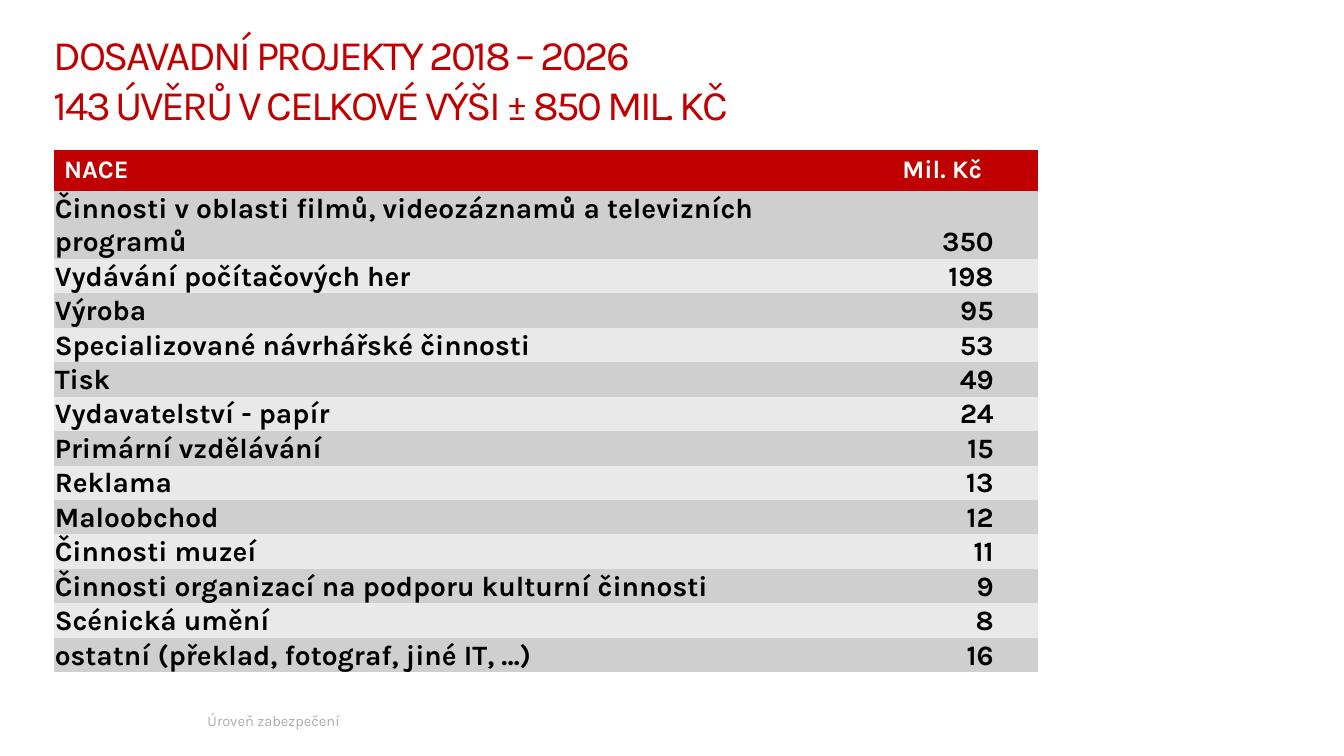
import dataclasses

import pptx
import pptx.dml.color
import pptx.enum.text
import pptx.oxml.ns
import pptx.util

Cm = pptx.util.Cm
Pt = pptx.util.Pt
Align = pptx.enum.text.PP_ALIGN
Anchor = pptx.enum.text.MSO_ANCHOR
RGB = pptx.dml.color.RGBColor.from_string


@dataclasses.dataclass(frozen=True)
class Theme:
    """Font, colours and type sizes of the slide."""
    font: str = "Karla"
    red: str = "C00000"
    white: str = "FFFFFF"
    black: str = "000000"
    muted: str = "ADADAD"
    bands: tuple = ("CFCFCF", "E9E9E9")
    title_size: float = 30
    header_size: float = 18
    body_size: float = 20
    label_size: float = 10.5


THEME = Theme()
NO_GRID_STYLE = "{2D5ABB26-0587-4C30-8999-92F81FD0307C}"
TITLE_LINES = (
    "DOSAVADNÍ PROJEKTY 2018 – 2026",
    "143 ÚVĚRŮ V CELKOVÉ VÝŠI ± 850 MIL. KČ",
)
HEADINGS = ("NACE", "Mil. Kč")
LOANS = (
    ("Činnosti v oblasti filmů, videozáznamů a televizních programů", 350),
    ("Vydávání počítačových her", 198),
    ("Výroba", 95),
    ("Specializované návrhářské činnosti", 53),
    ("Tisk", 49),
    ("Vydavatelství - papír", 24),
    ("Primární vzdělávání", 15),
    ("Reklama", 13),
    ("Maloobchod", 12),
    ("Činnosti muzeí", 11),
    ("Činnosti organizací na podporu kulturní činnosti", 9),
    ("Scénická umění", 8),
    ("ostatní (překlad, fotograf, jiné IT, …)", 16),
)


def style_paragraph(paragraph, size, color, bold=False, align=Align.LEFT):
    """Format a whole paragraph."""
    paragraph.alignment = align
    paragraph.font.name = THEME.font
    paragraph.font.size = Pt(size)
    paragraph.font.bold = bold
    paragraph.font.color.rgb = RGB(color)


def add_title(slide, left, top, width, height):
    """Fill the title placeholder with two tightly tracked lines."""
    title = slide.shapes.title
    title.left, title.top, title.width, title.height = left, top, width, height
    frame = title.text_frame
    frame.margin_left = frame.margin_right = frame.margin_top = frame.margin_bottom = 0
    frame.vertical_anchor = Anchor.BOTTOM
    frame.word_wrap = True
    frame.auto_size = pptx.enum.text.MSO_AUTO_SIZE.NONE
    frame.text = "\n".join(TITLE_LINES)
    for paragraph in frame.paragraphs:
        style_paragraph(paragraph, THEME.title_size, THEME.red)
        for run in paragraph.runs:
            run._r.get_or_add_rPr().set("spc", "-180")


def fill_cell(cell, text, fill, size, color, align):
    """Write one bold table cell on a solid fill."""
    cell.fill.solid()
    cell.fill.fore_color.rgb = RGB(fill)
    cell.text = text
    style_paragraph(cell.text_frame.paragraphs[0], size, color, True, align)


def add_loan_table(slide, left, top, width, height):
    """Add the banded table of loan volumes by activity."""
    frame = slide.shapes.add_table(len(LOANS) + 1, len(HEADINGS), left, top, width, height)
    table = frame.table
    table.horz_banding = False
    style = table._tbl.tblPr.find(pptx.oxml.ns.qn("a:tableStyleId"))
    style.text = NO_GRID_STYLE
    table.columns[1].width = Cm(4.83)
    table.columns[0].width = width - Cm(4.83)
    for row in table.rows:
        row.height = Cm(0.84)

    for column, (heading, align) in enumerate(zip(HEADINGS, (Align.LEFT, Align.CENTER))):
        fill_cell(table.cell(0, column), heading, THEME.red,
                  THEME.header_size, THEME.white, align)

    for index, (activity, amount) in enumerate(LOANS):
        entries = ((activity, Align.LEFT, Cm(0.02)), (str(amount), Align.RIGHT, Cm(1.12)))
        for column, (text, align, margin_right) in enumerate(entries):
            cell = table.cell(index + 1, column)
            cell.margin_left = cell.margin_top = Cm(0.02)
            cell.margin_right = margin_right
            cell.margin_bottom = 0
            cell.vertical_anchor = Anchor.BOTTOM
            fill_cell(cell, text, THEME.bands[index % 2],
                      THEME.body_size, THEME.black, align)


def add_security_label(slide, left, top, width, height):
    """Add the muted security label at the foot of the slide."""
    frame = slide.shapes.add_textbox(left, top, width, height).text_frame
    frame.word_wrap = True
    frame.vertical_anchor = Anchor.MIDDLE
    frame.text = "Úroveň zabezpečení"
    style_paragraph(frame.paragraphs[0], THEME.label_size, THEME.muted)


def main():
    """Build and save the presentation."""
    presentation = pptx.Presentation()
    presentation.slide_width = Cm(33.87)
    presentation.slide_height = Cm(19.05)
    slide = presentation.slides.add_slide(presentation.slide_layouts[5])
    margin = Cm(1.36)
    add_security_label(slide, Cm(4.98), Cm(17.65), Cm(9.04), Cm(1.02))
    add_title(slide, margin, Cm(0.69), Cm(19.13), Cm(2.57))
    add_loan_table(slide, margin, Cm(3.79), Cm(24.8), Cm(11.76))
    presentation.save("out.pptx")


if __name__ == "__main__":
    main()
